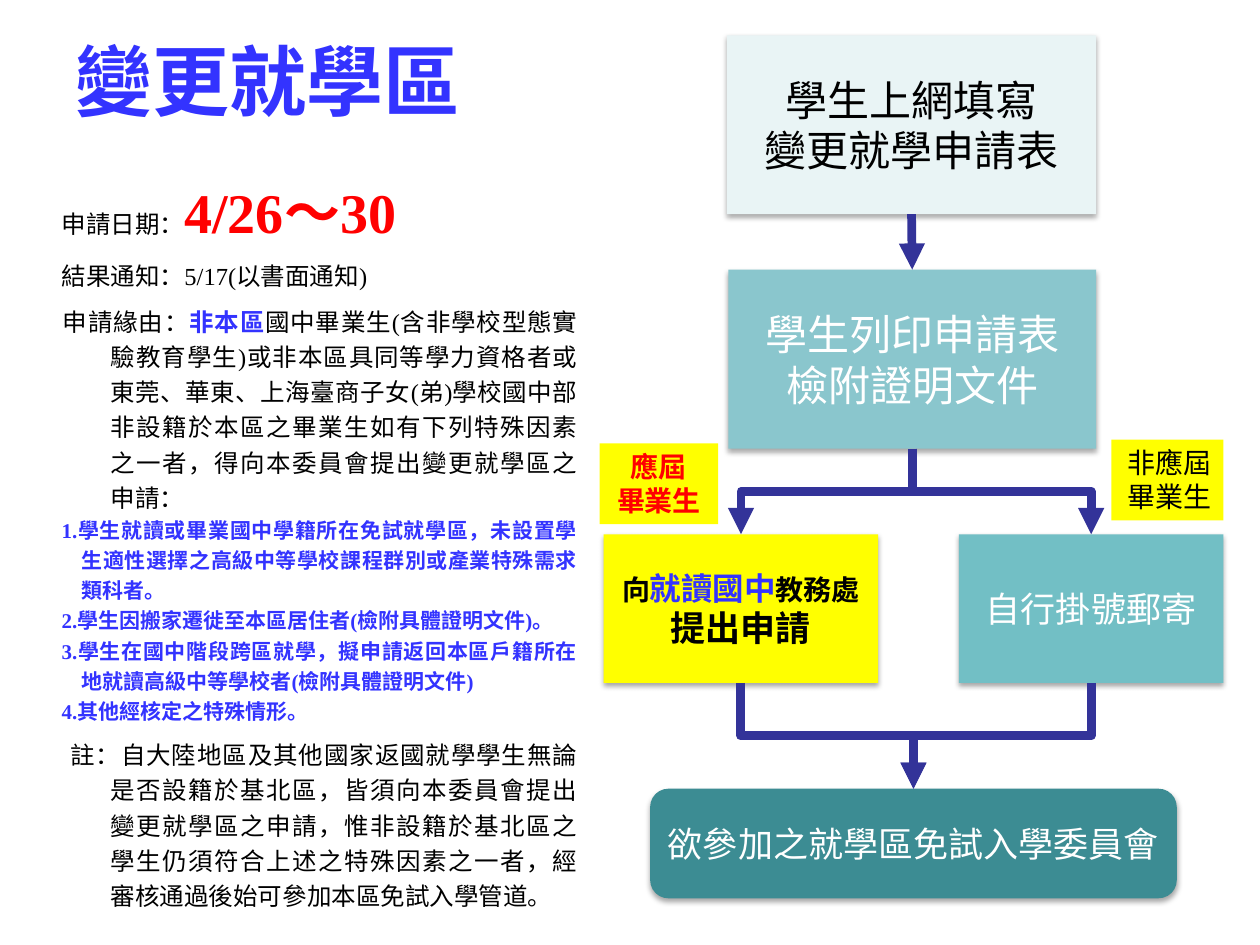
from dataclasses import dataclass

from lxml import etree
from pptx import Presentation
from pptx.dml.color import RGBColor
from pptx.enum.shapes import MSO_CONNECTOR, MSO_SHAPE
from pptx.enum.text import MSO_ANCHOR, PP_ALIGN
from pptx.oxml.ns import qn
from pptx.util import Inches, Pt

RECTANGLE, ROUNDED = MSO_SHAPE.RECTANGLE, MSO_SHAPE.ROUNDED_RECTANGLE
STRAIGHT, ELBOW = MSO_CONNECTOR.STRAIGHT, MSO_CONNECTOR.ELBOW
TOP, MIDDLE = MSO_ANCHOR.TOP, MSO_ANCHOR.MIDDLE
CENTER, RIGHT, JUSTIFY = PP_ALIGN.CENTER, PP_ALIGN.RIGHT, PP_ALIGN.JUSTIFY
TOP_SITE, BOTTOM_SITE = 0, 2
SERIF, SANS = "Times New Roman", "Noto Sans CJK SC"
BLACK, WHITE, BLUE, RED, YELLOW = "000000", "FFFFFF", "3333FF", "FF0000", "FFFF00"
ARROW_COLOR = "333399"


@dataclass(frozen=True)
class Run:
    text: str
    size: float
    color: str = BLACK
    bold: bool = False
    font: str = SERIF


@dataclass(frozen=True)
class Line:
    runs: tuple[Run, ...]
    align: PP_ALIGN = CENTER
    margin: float = 0
    indent: float = 0
    spacing: float = 1
    before: float = 0


@dataclass(frozen=True)
class Box:
    left: float
    top: float
    width: float
    height: float
    fill: str
    lines: tuple[Line, ...]
    kind: MSO_SHAPE = RECTANGLE
    anchor: MSO_ANCHOR = MIDDLE
    shadow: bool = True


def rgb(value: str) -> RGBColor:
    return RGBColor.from_string(value)


def set_font(font, run: Run) -> None:
    font.name = run.font
    font.size = Pt(run.size)
    font.bold = run.bold
    font.color.rgb = rgb(run.color)


def write(frame, lines: tuple[Line, ...], anchor: MSO_ANCHOR) -> None:
    frame.word_wrap = True
    frame.vertical_anchor = anchor
    for index, line in enumerate(lines):
        paragraph = frame.add_paragraph() if index else frame.paragraphs[0]
        paragraph.alignment = line.align
        paragraph.line_spacing = line.spacing
        paragraph.space_before = Pt(line.before if index else 0)
        if line.margin:
            properties = paragraph._p.get_or_add_pPr()
            properties.set("marL", str(Inches(line.margin)))
            properties.set("indent", str(Inches(line.indent)))
        for item in line.runs:
            run = paragraph.add_run()
            run.text = item.text
            if len(line.runs) > 1:
                set_font(run.font, item)
        if len(line.runs) == 1:
            set_font(paragraph.font, line.runs[0])


def add_text(slide, left: float, top: float, width: float, height: float,
             lines: tuple[Line, ...], anchor: MSO_ANCHOR = TOP):
    shape = slide.shapes.add_textbox(Inches(left), Inches(top), Inches(width), Inches(height))
    write(shape.text_frame, lines, anchor)
    return shape


def add_shadow(shape) -> None:
    effects = shape.element.spPr.find(qn("a:effectLst"))
    shadow = etree.SubElement(effects, qn("a:outerShdw"), blurRad=str(Pt(3.1)),
                              dist=str(Pt(1.8)), dir="5400000", rotWithShape="0")
    color = etree.SubElement(shadow, qn("a:srgbClr"), val=BLACK)
    etree.SubElement(color, qn("a:alpha"), val="35000")


def add_box(slide, box: Box):
    shape = slide.shapes.add_shape(box.kind, Inches(box.left), Inches(box.top),
                                   Inches(box.width), Inches(box.height))
    shape.shadow.inherit = False
    shape.fill.solid()
    shape.fill.fore_color.rgb = rgb(box.fill)
    shape.line.fill.background()
    if box.shadow:
        add_shadow(shape)
    write(shape.text_frame, box.lines, box.anchor)
    return shape


def style_arrow(connector) -> None:
    connector.line.color.rgb = rgb(ARROW_COLOR)
    connector.line.width = Pt(5)
    etree.SubElement(connector.line._get_or_add_ln(), qn("a:tailEnd"), type="triangle")
    etree.SubElement(connector.element.spPr, qn("a:effectLst"))


def add_straight_arrow(slide, upper, lower) -> None:
    connector = slide.shapes.add_connector(STRAIGHT, 0, 0, 0, 0)
    connector.begin_connect(upper, BOTTOM_SITE)
    connector.end_connect(lower, TOP_SITE)
    style_arrow(connector)


def add_elbow_arrow(slide, upper, lower) -> None:
    start_x, end_x = (shape.left + shape.width // 2 for shape in (upper, lower))
    start_y, end_y = upper.top + upper.height, lower.top
    drop, span = end_y - start_y, abs(end_x - start_x)
    left = (start_x + end_x - drop) // 2
    top = (start_y + end_y - span) // 2
    connector = slide.shapes.add_connector(ELBOW, left, top, left + drop, top + span)
    transform = connector.element.spPr.find(qn("a:xfrm"))
    if end_x < start_x:
        transform.set("rot", "5400000")
    else:
        transform.set("rot", "16200000")
        transform.set("flipH", "1")
    style_arrow(connector)


def centered(size: float, color: str, *texts: str, bold: bool = False) -> tuple[Line, ...]:
    return tuple(Line((Run(text, size, color, bold),)) for text in texts)


def body(*runs: Run, margin: float = 0.38, indent: float = -0.38, before: float = 6) -> Line:
    return Line(runs, JUSTIFY, margin, indent, 1.2, before)


TITLE = (Line((Run("變更就學區", 44, BLUE, True, SANS),)),)
REASONS = (
    "1.學生就讀或畢業國中學籍所在免試就學區，未設置學生適性選擇之高級中等學校課程群別或產業特殊需求類科者。",
    "2.學生因搬家遷徙至本區居住者(檢附具體證明文件)。",
    "3.學生在國中階段跨區就學，擬申請返回本區戶籍所在地就讀高級中等學校者(檢附具體證明文件)",
    "4.其他經核定之特殊情形。",
)
DETAILS = (
    body(Run("申請日期：", 14, font=SANS), Run("4/26～30", 32, RED, True)),
    body(Run("結果通知：5/17(以書面通知)", 14)),
    body(Run("申請緣由：", 14), Run("非本區", 14, BLUE, True),
         Run("國中畢業生(含非學校型態實驗教育學生)或非本區具同等學力資格者或東莞、華東、上海臺商子女(弟)"
             "學校國中部非設籍於本區之畢業生如有下列特殊因素之一者，得向本委員會提出變更就學區之申請：", 14),
         margin=0.39),
    *(body(Run(reason, 12, BLUE, True), margin=0.16, indent=-0.16, before=0)
      for reason in REASONS),
    body(Run("註：自大陸地區及其他國家返國就學學生無論是否設籍於基北區，皆須向本委員會提出變更就學區之申請，"
             "惟非設籍於基北區之學生仍須符合上述之特殊因素之一者，經審核通過後始可參加本區免試入學管道。", 14),
         margin=0.39, indent=-0.32),
)
SCHOOL = (Line((Run("向", 16, bold=True), Run("就讀國中", 18, BLUE, True),
                Run("教務處", 16, bold=True), Run("提出申請", 20, bold=True))),)
STEPS = (
    Box(5.77, 0.28, 2.93, 1.42, "E9F4F5", centered(24, BLACK, "學生上網填寫", "變更就學申請表")),
    Box(5.78, 2.14, 2.92, 1.42, "8AC6CD", centered(24, WHITE, "學生列印申請表", "檢附證明文件")),
    Box(4.79, 4.24, 2.18, 1.18, YELLOW, SCHOOL),
    Box(7.61, 4.24, 2.1, 1.18, "72BFC5", centered(20, WHITE, "自行掛號郵寄")),
    Box(5.16, 6.26, 4.18, 0.87, "3C8C93",
        centered(20, WHITE, "欲參加之就學區免試入學委員會"), ROUNDED),
)
LABELS = (
    Box(4.76, 3.52, 0.94, 0.64, YELLOW, centered(16, RED, "應屆", "畢業生", bold=True),
        anchor=TOP, shadow=False),
    Box(8.82, 3.49, 0.89, 0.64, YELLOW, (Line((Run("非應屆畢業生", 16),), RIGHT),),
        anchor=TOP, shadow=False),
)


def main() -> None:
    presentation = Presentation()
    presentation.slide_width, presentation.slide_height = Inches(10), Inches(7.5)
    slide = presentation.slides.add_slide(presentation.slide_layouts[6])
    add_text(slide, 0, 0.16, 4.26, 0.95, TITLE, MIDDLE)
    details = add_text(slide, 0.39, 1.17, 4.29, 6.04, DETAILS)
    details.text_frame.margin_top = Inches(0.13)
    fill_in, print_out, school, mail, committee = [add_box(slide, step) for step in STEPS]
    add_straight_arrow(slide, fill_in, print_out)
    for branch in (school, mail):
        add_elbow_arrow(slide, print_out, branch)
        add_elbow_arrow(slide, branch, committee)
    for label in LABELS:
        add_box(slide, label)
    presentation.save("out.pptx")


if __name__ == "__main__":
    main()
